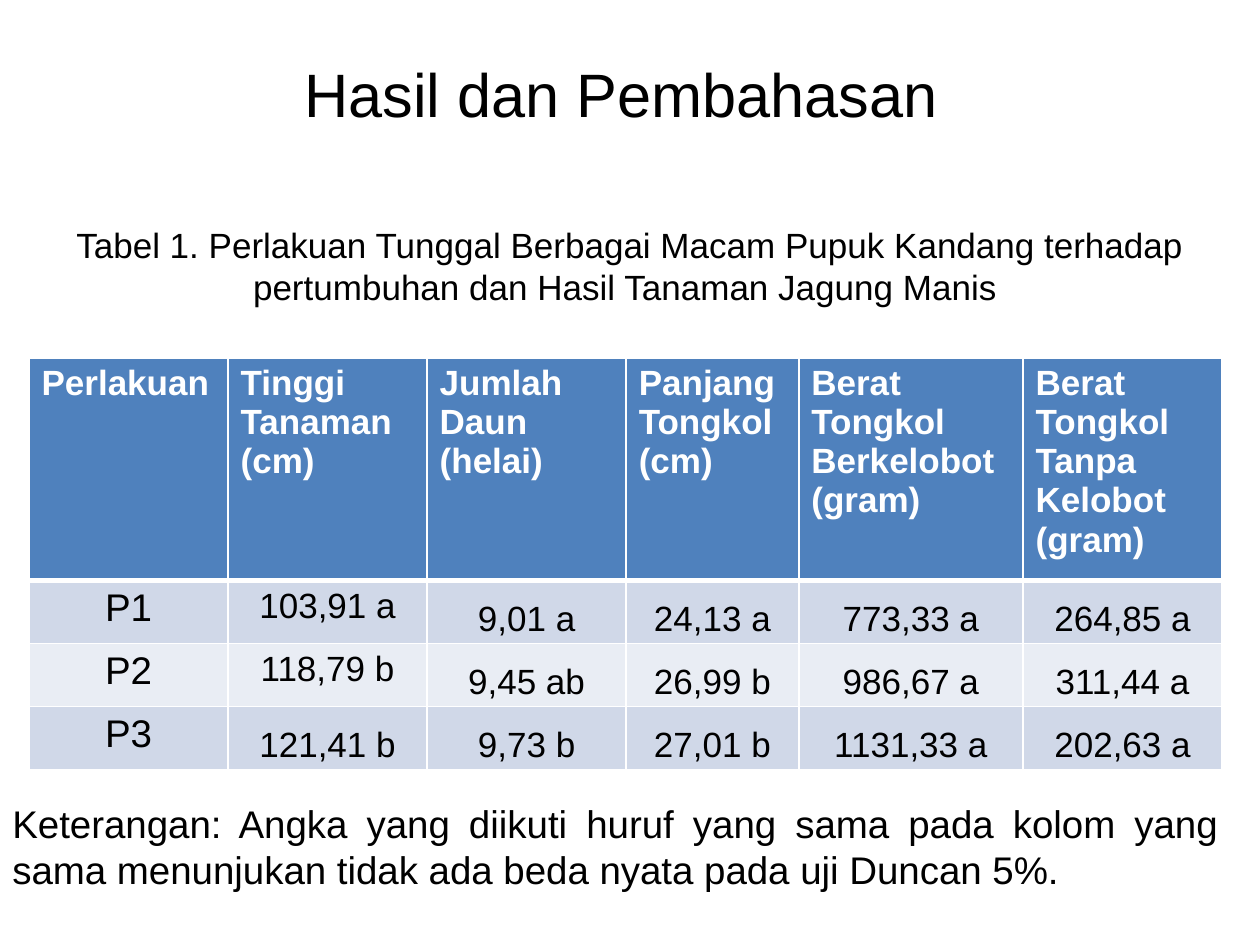
from pptx import Presentation
from pptx.dml.color import RGBColor
from pptx.enum.text import MSO_ANCHOR, PP_ALIGN
from pptx.oxml import parse_xml
from pptx.oxml.ns import nsdecls
from pptx.util import Inches, Pt

LEFT, CENTER, JUSTIFY = PP_ALIGN.LEFT, PP_ALIGN.CENTER, PP_ALIGN.JUSTIFY
MIDDLE = MSO_ANCHOR.MIDDLE
COLORS = {"text": "000000", "white": "FFFFFF", "header": "4F81BD",
          "odd": "D0D8E8", "even": "E9EDF4"}
COL_WIDTHS = [1.58, 1.58, 1.58, 1.37, 1.78, 1.58]
HEADER_HEIGHT, ROW_HEIGHT = 1.46, 0.5
ROWS = [
    ["Perlakuan", "Tinggi Tanaman (cm)", "Jumlah Daun (helai)",
     "Panjang Tongkol (cm)", "Berat Tongkol Berkelobot (gram)",
     "Berat Tongkol Tanpa Kelobot (gram)"],
    ["P1", "103,91 a", "9,01 a", "24,13 a", "773,33 a", "264,85 a"],
    ["P2", "118,79 b", "9,45 ab", "26,99 b", "986,67 a", "311,44 a"],
    ["P3", "121,41 b", "9,73 b", "27,01 b", "1131,33 a", "202,63 a"],
]


def add_text(tf, text, size=20, color="text", bold=False, align=CENTER, spacing=None):
    """Write one formatted paragraph into a text frame."""
    p = tf.paragraphs[0]
    p.alignment = align
    if spacing:
        p.line_spacing = spacing
    r = p.add_run()
    r.text = text
    r.font.name = "Arial"
    r.font.size = Pt(size)
    r.font.bold = bold
    r.font.color.rgb = RGBColor.from_string(COLORS[color])


def add_text_box(slide, box, text, **fmt):
    """Place a wrapped, vertically centred text box."""
    tf = slide.shapes.add_textbox(*map(Inches, box)).text_frame
    tf.word_wrap = True
    tf.vertical_anchor = MIDDLE
    add_text(tf, text, **fmt)


def set_borders(cell, bottom=1, top=1):
    """Draw white borders around a cell, widths in points."""
    tc_pr = cell._tc.get_or_add_tcPr()
    widths = {"lnL": 1, "lnR": 1, "lnT": top, "lnB": bottom}
    for i, (tag, width) in enumerate(widths.items()):
        tc_pr.insert(i, parse_xml(
            f'<a:{tag} {nsdecls("a")} w="{Pt(width)}"><a:solidFill>'
            f'<a:srgbClr val="{COLORS["white"]}"/></a:solidFill></a:{tag}>'))


def fill_cell(cell, text, row, col):
    """Format a cell by its place in the table."""
    is_header = row == 0
    fill = "header" if is_header else "odd" if row % 2 else "even"
    cell.fill.solid()
    cell.fill.fore_color.rgb = RGBColor.from_string(COLORS[fill])
    set_borders(cell, bottom=3 if is_header else 1, top=3 if row == 1 else 1)
    if is_header:
        add_text(cell.text_frame, text, color="white", bold=True, align=LEFT)
    elif col == 0:
        add_text(cell.text_frame, text, size=22)
    elif col == 1 and row < 3:
        add_text(cell.text_frame, text)
    else:
        cell.margin_left = cell.margin_right = Inches(0.07)
        cell.margin_top = cell.margin_bottom = 0
        add_text(cell.text_frame, text, spacing=1.5)


def add_results_table(slide, left, top):
    """Build the table of treatment results."""
    height = HEADER_HEIGHT + ROW_HEIGHT * (len(ROWS) - 1)
    table = slide.shapes.add_table(
        len(ROWS), len(COL_WIDTHS), Inches(left), Inches(top),
        Inches(sum(COL_WIDTHS)), Inches(height)).table
    for column, width in zip(table.columns, COL_WIDTHS):
        column.width = Inches(width)
    for i, values in enumerate(ROWS):
        table.rows[i].height = Inches(ROW_HEIGHT if i else HEADER_HEIGHT)
        for j, text in enumerate(values):
            fill_cell(table.cell(i, j), text, i, j)


def main():
    """Assemble and save the slide."""
    prs = Presentation()
    prs.slide_width, prs.slide_height = Inches(10), Inches(7.5)
    s = prs.slides.add_slide(prs.slide_layouts[6])
    add_text_box(s, (0.5, 0.23, 9, 1.02), "Hasil dan Pembahasan ", size=35)
    add_results_table(s, 0.23, 2.84)
    add_text_box(s, (0, 6.17, 9.77, 1.09),
                 "Keterangan: Angka yang diikuti huruf yang sama pada kolom yang "
                 "sama menunjukan tidak ada beda nyata pada uji Duncan 5%.",
                 size=22, align=JUSTIFY)
    add_text_box(s, (0, 1.56, 10, 1.09),
                 "Tabel 1. Perlakuan Tunggal Berbagai Macam Pupuk Kandang terhadap "
                 "pertumbuhan dan Hasil Tanaman Jagung Manis ")
    prs.save("out.pptx")


if __name__ == "__main__":
    main()
